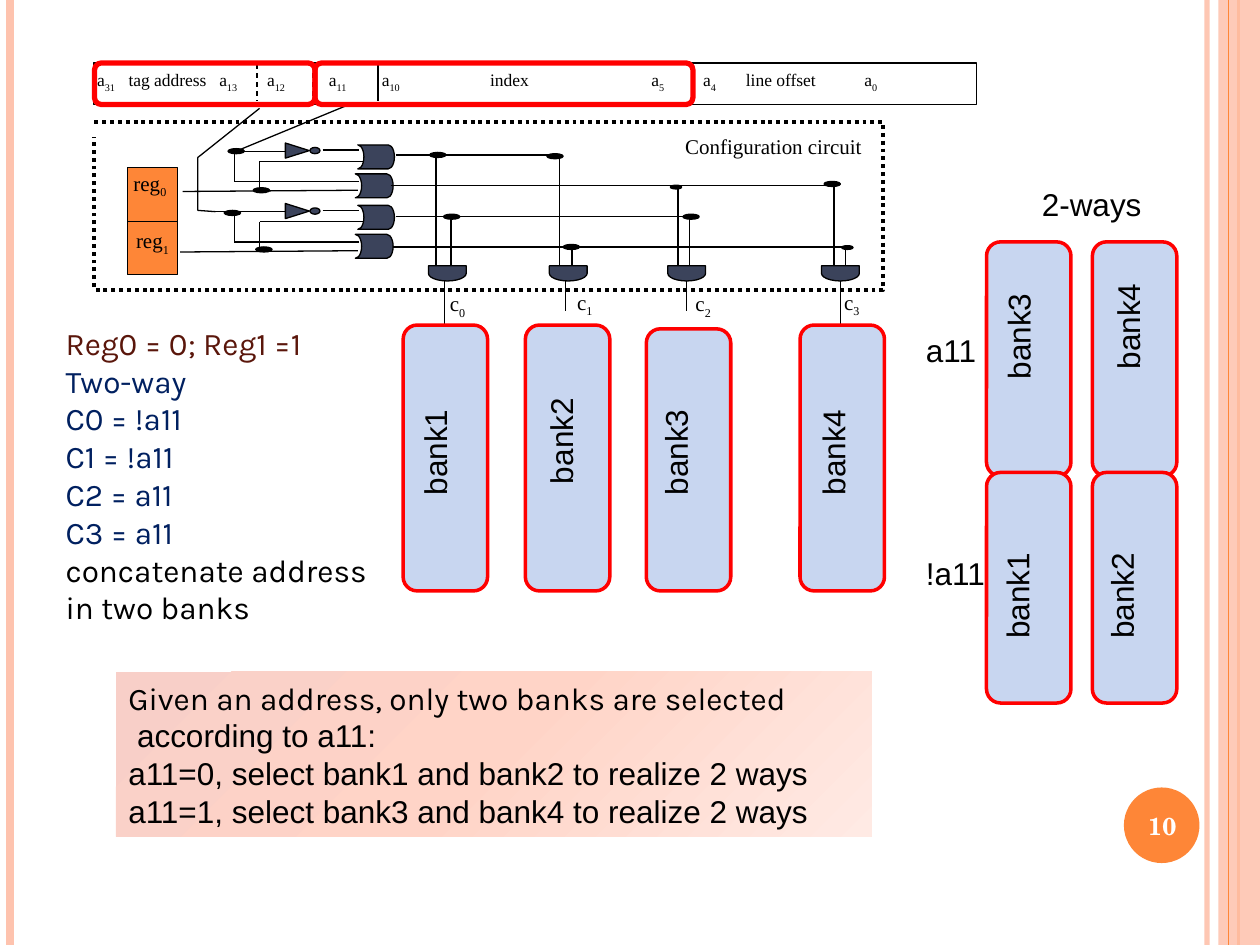
from dataclasses import dataclass
from typing import Optional

from lxml.etree import SubElement
from pptx import Presentation
from pptx.dml.color import RGBColor
from pptx.enum.dml import MSO_LINE_DASH_STYLE as Dash
from pptx.enum.shapes import MSO_CONNECTOR, MSO_SHAPE as Preset
from pptx.enum.text import MSO_ANCHOR as Anchor, MSO_AUTO_SIZE as AutoSize, PP_ALIGN as Align
from pptx.oxml import parse_xml
from pptx.oxml.ns import nsdecls, qn
from pptx.util import Cm, Pt

COLORS = {
    "black": "000000", "white": "FFFFFF", "orange": "FE8637", "peach": "FEC3AE",
    "gate": "3B435B", "bank": "C8D6F0", "red": "FF0000", "brown": "5A160B", "navy": "002060",
}
SERIF, SANS, ROUND, SCHOOL = "Times New Roman", "Arial", "Karla", "TeX Gyre Schola"


@dataclass
class Bank:
    name: str
    box: tuple
    label: tuple


@dataclass
class Wire:
    start: tuple
    end: tuple
    color: str = "black"
    width: float = 0.75
    dash: Optional[Dash] = None
    alpha: Optional[int] = None


def length(inches: float) -> Cm:
    """The slide is laid out on an inch grid."""
    return Cm(inches * 2.54)


def rgb(color: str) -> RGBColor:
    return RGBColor.from_string(COLORS[color])


def set_alpha(element, percent: int) -> None:
    color = next(element.iter(qn("a:srgbClr")))
    SubElement(color, qn("a:alpha")).set("val", str(percent * 1000))


def set_line(line, color: str, width: float, dash=None) -> None:
    line.color.rgb = rgb(color)
    line.width = Pt(width)
    if dash:
        line.dash_style = dash


def add_wire(slide, wire: Wire):
    points = [length(value) for value in (*wire.start, *wire.end)]
    connector = slide.shapes.add_connector(MSO_CONNECTOR.STRAIGHT, *points)
    set_line(connector.line, wire.color, wire.width, wire.dash)
    properties = connector._element.spPr
    if wire.alpha:
        set_alpha(properties, wire.alpha)
    SubElement(properties, qn("a:effectLst"))


def add_box(slide, box: tuple, preset=Preset.RECTANGLE, fill=None, line=None,
            width=0.75, rotation=0.0):
    shape = slide.shapes.add_shape(preset, *map(length, box))
    shape.shadow.inherit = False
    shape.rotation = rotation
    if fill:
        shape.fill.solid()
        shape.fill.fore_color.rgb = rgb(fill)
    else:
        shape.fill.background()
    if line:
        set_line(shape.line, line, width)
    else:
        shape.line.fill.background()
    return shape


def add_path(slide, points: list, width: float, dash=None) -> None:
    corners = [(length(x), length(y)) for x, y in points]
    builder = slide.shapes.build_freeform(*corners[0], scale=1)
    builder.add_line_segments(corners[1:], close=False)
    shape = builder.convert_to_shape()
    shape.shadow.inherit = False
    shape.fill.background()
    set_line(shape.line, "black", width, dash)


def style(paragraph, size: float, font: str, color="black", align=Align.LEFT) -> None:
    paragraph.font.size, paragraph.font.name = Pt(size), font
    paragraph.font.color.rgb = rgb(color)
    paragraph.alignment = align


def add_text(slide, box: tuple, text: str, size=18, font=SANS, color="black",
             align=Align.LEFT, insets=(0.1, 0.05, 0.1, 0.05), vertical=False):
    """Add a text box; an underscore puts the characters after it, up to a tab, below the line."""
    frame = slide.shapes.add_textbox(*map(length, box)).text_frame
    frame.word_wrap = True
    frame.margin_left, frame.margin_top, frame.margin_right, frame.margin_bottom = map(length, insets)
    if vertical:
        frame._txBody.bodyPr.set("vert", "vert270")
    paragraph = frame.paragraphs[0]
    style(paragraph, size, font, color, align)
    for index, field in enumerate(text.split("\t")):
        base, _, subscript = field.partition("_")
        paragraph.add_run().text = ("\t" if index else "") + base
        if subscript:
            run = paragraph.add_run()
            run.text = subscript
            run._r.get_or_add_rPr().set("baseline", "-25000")
    return frame


def add_bank(slide, bank: Bank) -> None:
    add_box(slide, bank.box, Preset.ROUNDED_RECTANGLE, "bank", "red", 2)
    add_text(slide, (*bank.label, 0.5, 1.17), bank.name, vertical=True)


def add_frame_decoration(slide) -> None:
    for x, color, width, alpha in [(9.58, "peach", 3, 93), (0.08, "peach", 4.5, None),
                                   (9.83, "orange", 1.5, None)]:
        add_wire(slide, Wire((x, 0), (x, 7.5), color, width, alpha=alpha))
    band = add_box(slide, (9.67, 0, 0.33, 7.5), fill="peach")
    set_alpha(band._element.spPr, 87)
    add_wire(slide, Wire((9.75, 0), (9.75, 7.5), "orange"))
    add_box(slide, (8.92, 6.25, 0.6, 0.6), Preset.OVAL, "orange")
    number = add_text(slide, (8.89, 6.27, 0.67, 0.57), "10", 14, SCHOOL, "white", Align.CENTER)
    number.vertical_anchor = Anchor.MIDDLE
    number.paragraphs[0].font.bold = True


def add_address(slide) -> None:
    for x, width, dash in [(3, 1.25, None), (5.49, 1.25, None), (2.48, 0.75, Dash.DASH),
                           (2.04, 0.75, Dash.DASH)]:
        add_wire(slide, Wire((x, 0.51), (x, 0.8), width=width, dash=dash))
    add_box(slide, (0.74, 0.5, 7.01, 0.33), line="black")
    fields = ["a_31", "tag address", "a_13", "a_12", "a_11", "a_10", "index", "a_5", "a_4",
              "line offset", "a_0"]
    starts = [1.02, 1.74, 2.12, 2.61, 3.03, 3.89, 5.17, 5.58, 5.92, 6.86]
    frame = add_text(slide, (0.74, 0.5, 7.01, 0.33), "\t".join(fields), 10, SERIF,
                     insets=(0.03, 0.05, 0, 0.05))
    properties = frame.paragraphs[0]._p.get_or_add_pPr()
    stops = parse_xml(f"<a:tabLst {nsdecls('a')}/>")
    for start in starts:
        stop = SubElement(stops, qn("a:tab"))
        stop.set("pos", str(length(start - 0.77)))
        stop.set("algn", "l")
    properties.insert_element_before(stops, "a:defRPr", "a:extLst")


def add_circuit(slide) -> None:
    # Registers
    add_box(slide, (1.01, 1.33, 0.4, 0.85), fill="orange", line="black")
    for name, x, y in [("reg_1", 1.08, 1.81), ("reg_0", 1.06, 1.35)]:
        add_text(slide, (x, y, 0.4, 0.37), name, 12, SERIF, insets=(0, 0, 0, 0.05))
    add_wire(slide, Wire((1.02, 1.76), (1.41, 1.76)))

    # Outputs
    for x, bottom in [(3.53, 2.61), (4.49, 2.47), (5.45, 2.47), (6.67, 2.61)]:
        add_wire(slide, Wire((x, 2.23), (x, bottom)))
    for index, (x, y) in enumerate([(3.57, 2.31), (4.58, 2.3), (5.52, 2.31), (6.7, 2.3)]):
        add_box(slide, (x, y, 0.53, 0.2), fill="white")
        add_text(slide, (x, y, 0.53, 0.2), f"c_{index}", 12, SERIF, insets=(0, 0, 0, 0))

    # Two decoder stages, each an inverter and two OR gates
    for y, input_x, register_x in [(1.1, 1.83, 1.45), (1.58, 1.66, 1.43)]:
        for x, gate_y, width in [(2.84, y + 0.05, 0.29), (2.82, y + 0.28, 0.3)]:
            add_box(slide, (x, gate_y, width, 0.19), Preset.FLOWCHART_STORED_DATA, "gate", "black",
                    rotation=180)
        add_box(slide, (2.3, y, 0.12, 0.19), Preset.FLOWCHART_MERGE, "gate", "black", rotation=270)
        add_box(slide, (2.46, y + 0.07, 0.08, 0.05), Preset.FLOWCHART_CONNECTOR, "gate", "black")
        for x1, y1, x2, y2 in [(2.56, 0.09, 2.85, 0.09), (2.89, 0.18, 2.06, 0.18),
                               (2.26, 0.1, input_x, 0.1), (2.84, 0.41, register_x, 0.42),
                               (2.85, 0.34, 1.86, 0.34), (1.86, 0.1, 1.86, 0.34),
                               (2.06, 0.18, 2.06, 0.41)]:
            add_wire(slide, Wire((x1, y + y1), (x2, y + y2)))

    # AND gates and the lines that feed them
    for x in (3.49, 4.45, 5.39, 6.61):
        add_box(slide, (x, 2.02, 0.12, 0.3), Preset.FLOWCHART_DELAY, "gate", "black", rotation=90)
    for x, right, y in [(3.12, 6.69, 1.96), (3.14, 5.46, 1.72), (3.1, 6.62, 1.47), (3.14, 4.44, 1.23)]:
        add_wire(slide, Wire((x, y), (right, y)))
    for x, y in [(3.46, 1.24), (3.58, 1.73), (4.44, 1.24), (4.54, 1.97), (5.38, 1.48),
                 (5.47, 1.73), (6.71, 1.97), (6.62, 1.46)]:
        add_wire(slide, Wire((x, y), (x, 2.1)))

    # Dotted outline, junctions and address taps
    add_path(slide, [(0.75, 0.97), (7.01, 0.97), (7.01, 2.3), (0.75, 2.3), (0.75, 1.09)],
             2.25, Dash.ROUND_DOT)
    junctions = [(5.42, 1.7), (4.34, 1.22), (2.01, 1.49), (3.52, 1.7), (3.41, 1.21), (6.54, 1.44),
                 (4.47, 1.94), (2.03, 1.96), (1.78, 1.67), (1.81, 1.18)]
    dots = [(6.68, 1.95, 0.09, 0.03), (5.32, 1.47, 0.09, 0.03)]
    for box in dots + [(x, y, 0.13, 0.04) for x, y in junctions]:
        add_box(slide, box, Preset.OVAL, "black", "black")
    add_text(slide, (4.14, 1.06, 2.7, 0.18), "Configuration circuit", 12, SERIF,
             align=Align.RIGHT, insets=(0, 0, 0, 0))
    add_path(slide, [(2.06, 0.86), (1.57, 1.25), (1.57, 1.67), (1.71, 1.68)], 0.75)
    add_wire(slide, Wire((2.77, 0.83), (1.85, 1.21)))


def add_settings(slide) -> None:
    body = slide.placeholders[1]
    body.left, body.top, body.width, body.height = map(length, (0.42, 2.52, 2.67, 2.52))
    frame = body.text_frame
    lines = ["Reg0 = 0; Reg1 =1", "Two-way", "C0 = !a11", "C1 = !a11", "C2 = a11", "C3 = a11",
             "concatenate address in two banks"]
    frame.text = "\n".join(lines)
    frame.auto_size = AutoSize.NONE
    for paragraph, color in zip(frame.paragraphs, ["brown"] + ["navy"] * 5 + ["black"]):
        style(paragraph, 18, ROUND, color)
        paragraph.space_before = Pt(0)
        properties = paragraph._p.get_or_add_pPr()
        properties.set("marL", "0")
        properties.set("indent", "0")
        properties.insert_element_before(parse_xml(f"<a:buNone {nsdecls('a')}/>"), "a:defRPr")


def add_summary(slide) -> None:
    shape = add_box(slide, (0.92, 5.33, 6, 1.31), fill="white")
    stops = "".join(f'<a:gs pos="{place}000"><a:srgbClr val="{color}"/></a:gs>'
                    for place, color in [(0, "F8CFC8"), (50, "FFD4C7"), (100, "FFEAE4")])
    properties = shape._element.spPr
    properties.replace(properties.find(qn("a:solidFill")), parse_xml(
        f'<a:gradFill {nsdecls("a")}><a:gsLst>{stops}</a:gsLst><a:lin ang="2700000"/></a:gradFill>'))
    frame = shape.text_frame
    frame.text = "\n".join(["Given an address, only two banks are selected", " according to a11:",
                            "a11=0, select bank1 and bank2 to realize 2 ways",
                            "a11=1, select bank3 and bank4 to realize 2 ways"])
    for paragraph, font in zip(frame.paragraphs, [ROUND] + [SANS] * 3):
        style(paragraph, 18, font)


def main() -> None:
    presentation = Presentation()
    presentation.slide_width, presentation.slide_height = length(10), length(7.5)
    slide = presentation.slides.add_slide(presentation.slide_layouts[1])
    title = slide.shapes.title._element
    title.getparent().remove(title)

    add_frame_decoration(slide)
    add_circuit(slide)
    add_address(slide)
    for bank in [
        Bank("bank1", (3.2, 2.58, 0.67, 2.11), (3.25, 2.86)),
        Bank("bank2", (4.17, 2.58, 0.67, 2.11), (4.25, 2.77)),
        Bank("bank3", (5.13, 2.61, 0.67, 2.08), (5.16, 2.86)),
        Bank("bank4", (6.35, 2.58, 0.67, 2.11), (6.41, 2.86)),
        Bank("bank3", (7.83, 1.92, 0.67, 1.86), (7.88, 1.94)),
        Bank("bank4", (8.67, 1.92, 0.67, 1.86), (8.75, 1.86)),
        Bank("bank1", (7.83, 3.75, 0.67, 1.83), (7.87, 4)),
        Bank("bank2", (8.67, 3.75, 0.67, 1.83), (8.7, 4)),
    ]:
        add_bank(slide, bank)
    add_settings(slide)

    # Highlighted address fields and way labels
    for x, width in [(2.5, 3), (0.75, 1.75)]:
        add_box(slide, (x, 0.5, width, 0.33), Preset.ROUNDED_RECTANGLE, line="red", width=3)
    for text, x, y, width in [("a11", 7.25, 2.58, 0.75), ("!a11", 7.25, 4.35, 0.75),
                              ("2-ways", 8.17, 1.42, 1.17)]:
        add_text(slide, (x, y, width, 0.4), text)
    add_summary(slide)
    presentation.save("out.pptx")


if __name__ == "__main__":
    main()
